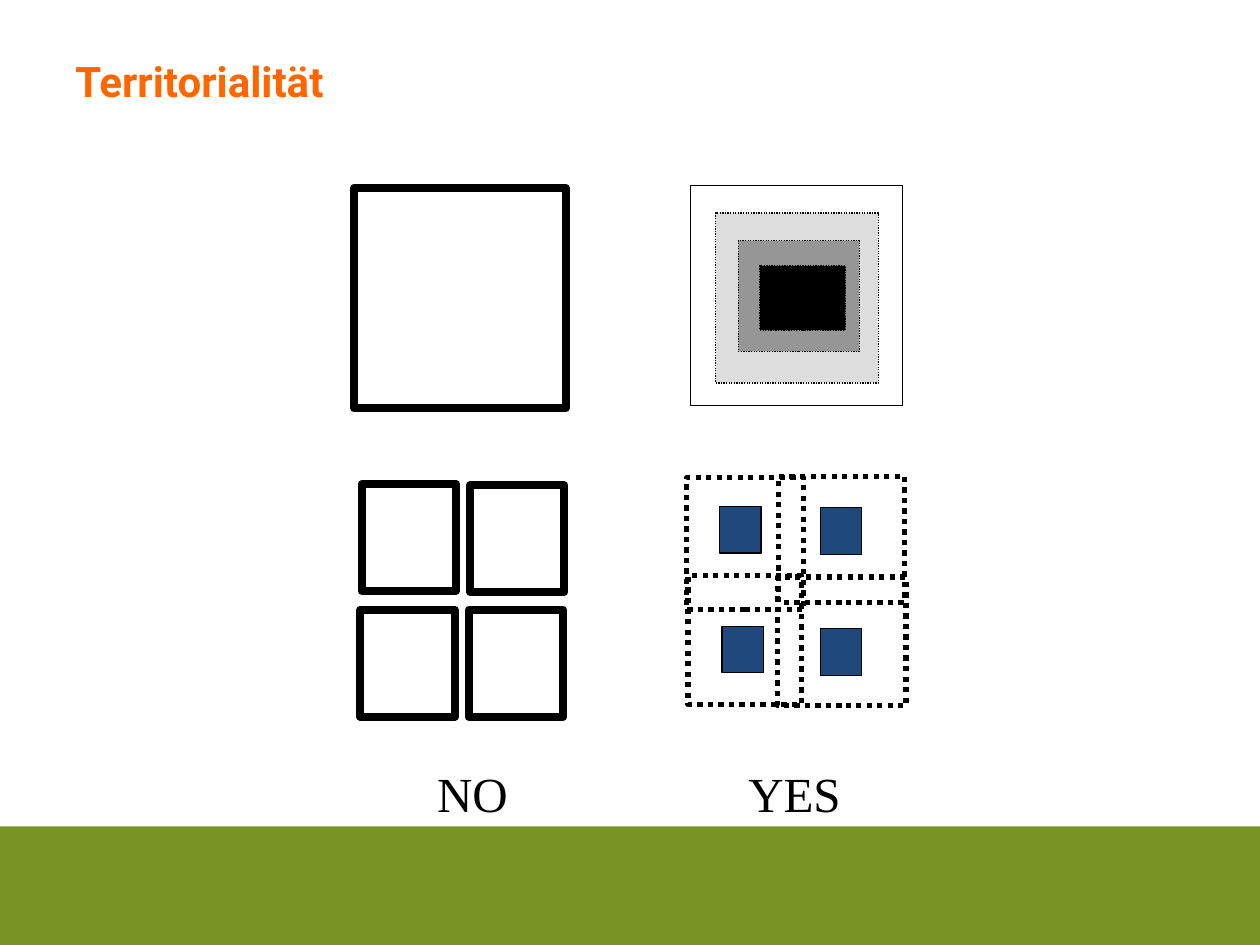
from lxml.etree import SubElement
from pptx import Presentation
from pptx.dml.color import RGBColor
from pptx.enum.dml import MSO_LINE
from pptx.enum.shapes import MSO_SHAPE
from pptx.oxml.ns import qn
from pptx.util import Inches, Pt

BLACK = RGBColor(0x00, 0x00, 0x00)
GREEN = RGBColor(0x78, 0x94, 0x24)
ORANGE = RGBColor(0xFF, 0x66, 0x00)
BLUE = RGBColor(0x1F, 0x49, 0x7D)
LIGHT_GRAY = RGBColor(0xDD, 0xDD, 0xDD)
GRAY = RGBColor(0x96, 0x96, 0x96)

SOLID_PANES = [(2.87, 3.84), (2.86, 4.84), (3.72, 4.84), (3.73, 3.85)]
DOTTED_ZONES = [
    (5.45, 3.79, 0.93, 1.05),
    (5.46, 4.57, 0.9, 1.02),
    (6.18, 3.78, 1, 1),
    (6.17, 4.58, 1.02, 1.02),
]
CORES = [(6.51, 4.99), (5.73, 4.97), (5.71, 4.02), (6.51, 4.03)]
NESTED_ZONES = [
    ((5.48, 1.47, 1.68, 1.75), None, 0.25),
    ((5.68, 1.69, 1.29, 1.35), LIGHT_GRAY, 0.75),
    ((5.86, 1.91, 0.96, 0.88), GRAY, 0.75),
    ((6.03, 2.11, 0.68, 0.51), BLACK, 0.75),
]


class TerritorySlide:
    title_font = "Roboto"
    label_font = "Times New Roman"

    def __init__(self, presentation):
        self.slide = presentation.slides.add_slide(presentation.slide_layouts[6])

    def rectangle(self, box, fill=None, line_width=None, dotted=False):
        shape = self.slide.shapes.add_shape(MSO_SHAPE.RECTANGLE, *map(Inches, box))
        shape.shadow.inherit = False
        if fill is None:
            shape.fill.background()
        else:
            shape.fill.solid()
            shape.fill.fore_color.rgb = fill
        if line_width is None:
            shape.line.fill.background()
        else:
            shape.line.color.rgb = BLACK
            shape.line.width = Pt(line_width)
            if dotted:
                shape.line.dash_style = MSO_LINE.ROUND_DOT

    def text(self, box, words, font, size, color, bold=False, tab=None, margin_top=0.05):
        shape = self.slide.shapes.add_textbox(*map(Inches, box))
        frame = shape.text_frame
        frame.word_wrap = True
        frame.margin_top = Inches(margin_top)
        paragraph = frame.paragraphs[0]
        if tab is not None:
            properties = paragraph._p.get_or_add_pPr()
            tab_list = SubElement(properties, qn("a:tabLst"))
            SubElement(tab_list, qn("a:tab"), pos=str(Inches(tab)), algn="l")
        run = paragraph.add_run()
        run.text = words
        run.font.name = font
        run.font.size = Pt(size)
        run.font.bold = bold
        run.font.color.rgb = color


def main():
    presentation = Presentation()
    presentation.slide_width = Inches(10)
    presentation.slide_height = Inches(7.5)
    page = TerritorySlide(presentation)

    page.rectangle((0, 6.56, 10, 0.94), fill=GREEN)
    page.text((0.5, 0.39, 9, 0.78), "Territorialität", page.title_font, 24, ORANGE, bold=True)

    for left, top in SOLID_PANES:
        page.rectangle((left, top, 0.75, 0.85), line_width=4.5)
    for zone in DOTTED_ZONES:
        page.rectangle(zone, line_width=3, dotted=True)
    for left, top in CORES:
        page.rectangle((left, top, 0.33, 0.37), fill=BLUE, line_width=0.75)

    page.rectangle((2.81, 1.49, 1.68, 1.75), line_width=4.5)
    for zone, fill, line_width in NESTED_ZONES:
        page.rectangle(zone, fill, line_width, dotted=True)

    page.text((3.37, 5.96, 3.65, 1.03), "NO\tYES", page.label_font, 28, BLACK,
              tab=2.47, margin_top=0.1)

    presentation.save("out.pptx")


if __name__ == "__main__":
    main()
